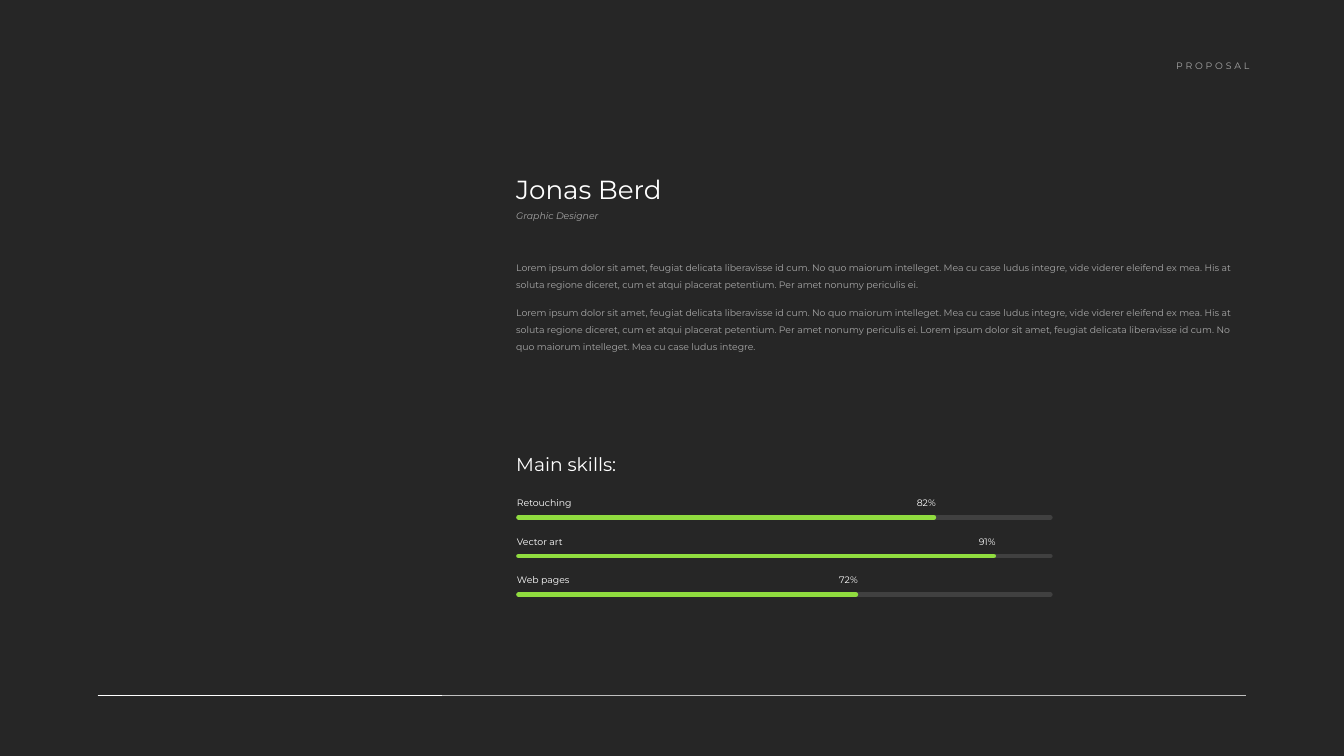
from lxml import etree
from pptx import Presentation
from pptx import util as u
from pptx.dml.color import RGBColor
from pptx.enum import shapes, text
from pptx.oxml.ns import qn

FONT = "Montserrat"
DARK, TRACK, GREY, RULE = "262626", "404040", "A6A6A6", "BFBFBF"
WHITE, GREEN = "FFFFFF", "90DC3F"

TAG = "PROPOSAL"
NAME, ROLE = "Jonas Berd", "Graphic Designer"
INTRO = (
    "Lorem ipsum dolor sit amet, feugiat delicata liberavisse id cum. "
    "No quo maiorum intelleget. Mea cu case ludus integre, vide viderer "
    "eleifend ex mea. His at soluta regione diceret, cum et atqui placerat "
    "petentium. Per amet nonumy periculis ei."
)
BIO = [
    INTRO,
    INTRO + " Lorem ipsum dolor sit amet, feugiat delicata liberavisse id cum. "
    "No quo maiorum intelleget. Mea cu case ludus integre.",
]
SKILLS_TITLE = "Main skills:"
# skill, label, length of the filled bar in cm
SKILLS = [
    ("Retouching", "82%", 15.7),
    ("Vector art", "91%", 17.96),
    ("Web pages", "72%", 12.75),
]

TEXT_X = 19.26
BAR_X, BAR_Y, BAR_W, BAR_STEP = 19.6, 19.56, 20.1, 1.46
LABEL_RISE, LABEL_H, PERCENT_W, INSET = 0.88, 0.69, 4, 0.32
RULE_X, RULE_Y, RULE_END, RULE_MARK = 3.69, 26.29, 47.09, 16.71


def rgb(value):
    return RGBColor.from_string(value)


def add_text(s, box, paragraphs, right=False):
    """Each paragraph is (text, size, colour, options)."""
    sp = s.shapes.add_textbox(*(u.Cm(v) for v in box))
    tf = sp.text_frame
    tf.word_wrap = True
    tf.auto_size = text.MSO_AUTO_SIZE.SHAPE_TO_FIT_TEXT
    for i, (words, size, color, opts) in enumerate(paragraphs):
        p = tf.add_paragraph() if i else tf.paragraphs[0]
        p.alignment = text.PP_ALIGN.RIGHT if right else text.PP_ALIGN.LEFT
        p.space_before = u.Pt(opts.get("before", 0))
        p.line_spacing = opts.get("spacing", 1.0)
        r = p.add_run()
        r.text = words
        r.font.name, r.font.size = FONT, u.Pt(size)
        r.font.color.rgb = rgb(color)
        r.font.italic = opts.get("italic", False)
        if "tracking" in opts:
            r.font._element.set("spc", str(opts["tracking"] * 100))


def add_line(s, x1, x2, y, color, width, rounded=False):
    """Horizontal line without shadow."""
    ln = s.shapes.add_connector(shapes.MSO_CONNECTOR.STRAIGHT,
                                u.Cm(x1), u.Cm(y), u.Cm(x2), u.Cm(y))
    ln.line.color.rgb = rgb(color)
    ln.line.width = u.Pt(width)
    spPr = ln._element.spPr
    etree.SubElement(spPr, qn("a:effectLst"))
    if rounded:
        spPr.find(qn("a:ln")).set("cap", "rnd")


def add_skill(s, y, skill, percent, length):
    end = BAR_X + length
    add_line(s, BAR_X, BAR_X + BAR_W, y, TRACK, 5, rounded=True)
    add_line(s, BAR_X, end, y, GREEN, 5, rounded=True)
    top = y - LABEL_RISE
    add_text(s, (TEXT_X + 0.03, top, 6.43, LABEL_H), [(skill, 10, WHITE, {})])
    add_text(s, (end + INSET - PERCENT_W, top, PERCENT_W, LABEL_H),
             [(percent, 10, WHITE, {})], right=True)


def main():
    prs = Presentation()
    prs.slide_width, prs.slide_height = u.Cm(50.8), u.Cm(28.58)
    s = prs.slides.add_slide(prs.slide_layouts[6])
    s.background.fill.solid()
    s.background.fill.fore_color.rgb = rgb(DARK)

    add_line(s, RULE_X, RULE_END, RULE_Y, RULE, 1.5)
    add_line(s, RULE_X, RULE_MARK, RULE_Y, WHITE, 1.5)
    add_text(s, (41.48, 2.15, 5.99, LABEL_H),
             [(TAG, 10, GREY, {"tracking": 3})], right=True)
    add_text(s, (TEXT_X, 6.42, 9.73, 2.13),
             [(NAME, 28, WHITE, {}),
              (ROLE, 10, GREY, {"before": 6, "italic": True})])
    add_text(s, (TEXT_X, 9.58, 27.84, 3.81),
             [(words, 10, GREY, {"before": 12, "spacing": 1.5}) for words in BIO])

    add_text(s, (TEXT_X, 16.99, 6.96, 1.12), [(SKILLS_TITLE, 20, WHITE, {})])
    for i, skill in enumerate(SKILLS):
        add_skill(s, BAR_Y + i * BAR_STEP, *skill)

    prs.save("out.pptx")


if __name__ == "__main__":
    main()
